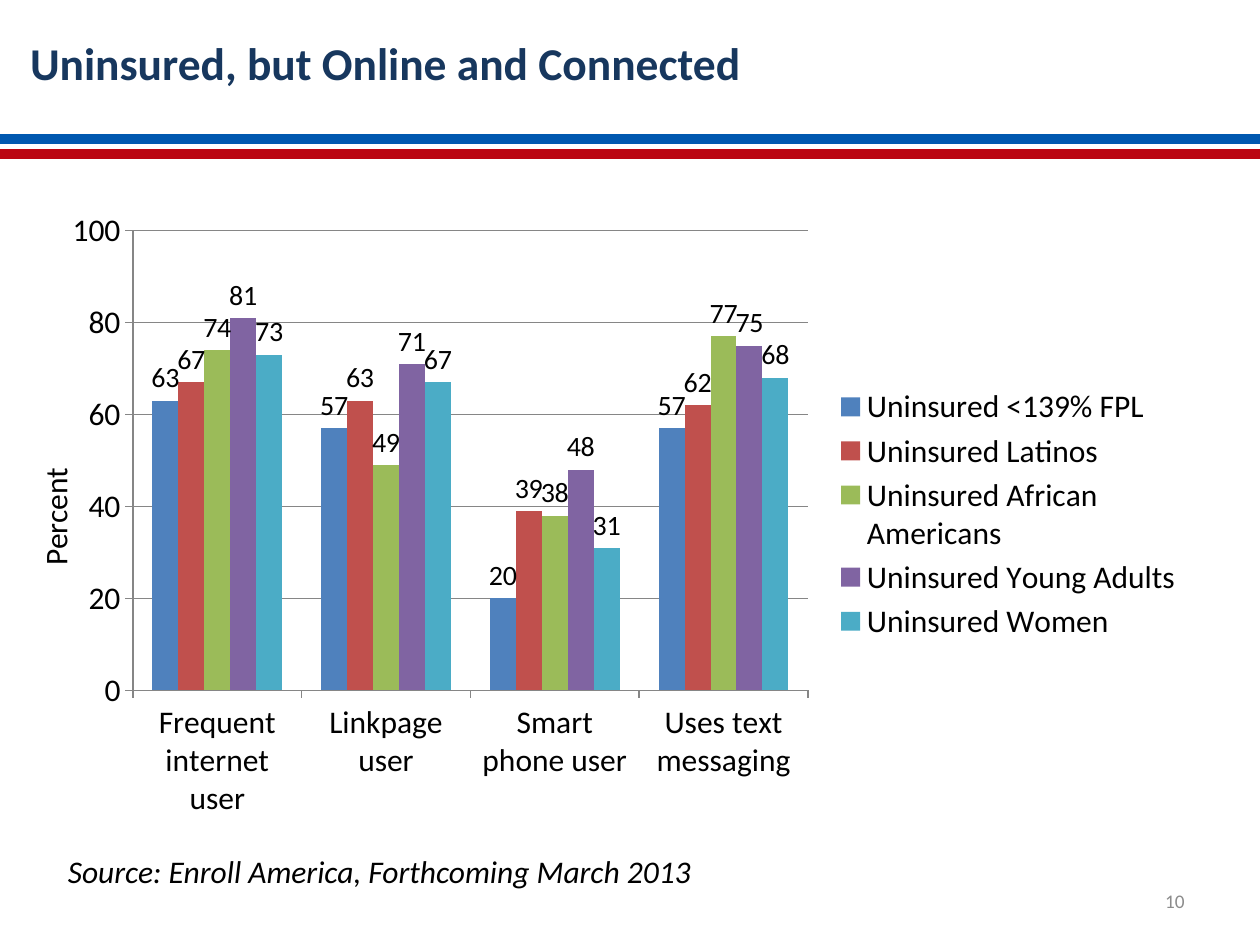
import pptx
import pptx.util
import pptx.dml.color
import pptx.chart.data
import pptx.enum.chart
import pptx.enum.shapes
import pptx.enum.text
from lxml import etree

Pt = pptx.util.Pt
Align = pptx.enum.text.PP_ALIGN
Anchor = pptx.enum.text.MSO_ANCHOR
Kind = pptx.enum.chart

# Content
TITLE = "Uninsured, but Online and Connected"
SOURCE = "Source: Enroll America, Forthcoming March 2013"
GROUPS = ["Frequent internet user", "Linkpage user",
          "Smart phone user", "Uses text messaging"]
SERIES = [
    ("Uninsured <139% FPL", (63, 57, 20, 57), "4F81BD"),
    ("Uninsured Latinos", (67, 63, 39, 62), "C0504D"),
    ("Uninsured African Americans", (74, 49, 38, 77), "9BBB59"),
    ("Uninsured Young Adults", (81, 71, 48, 75), "8064A2"),
    ("Uninsured Women", (73, 67, 31, 68), "4BACC6"),
]
STRIPES = [(77.8, "0058B0"), (84.2, "FFFFFF"), (86.4, "BB0512")]
FONT, GREY = "Calibri", "868686"


def color(code):
    return pptx.dml.color.RGBColor.from_string(code)


def style(font, size, code="000000", bold=False, italic=False):
    font.name, font.size = FONT, Pt(size)
    font.bold, font.italic = bold, italic
    font.color.rgb = color(code)


def write(text, box, size=18, align=Align.LEFT, anchor=Anchor.TOP,
          turn=0, **look):
    shape = slide.shapes.add_textbox(*map(Pt, box))
    shape.rotation = turn
    frame = shape.text_frame
    frame.word_wrap, frame.vertical_anchor = True, anchor
    para = frame.paragraphs[0]
    para.alignment = align
    run = para.add_run()
    run.text = text
    style(run.font, size, **look)


def place(part, x, y, w, h, inner=False):
    """Fix a chart part at fractions of the chart area."""
    for old in part.findall(C + "layout"):
        part.remove(old)
    layout = etree.Element(C + "layout")
    manual = etree.SubElement(layout, C + "manualLayout")
    items = [("layoutTarget", "inner")] if inner else []
    items += [("xMode", "edge"), ("yMode", "edge"),
              ("x", x), ("y", y), ("w", w), ("h", h)]
    for tag, val in items:
        etree.SubElement(manual, C + tag).set("val", str(val))
    part.insert(0 if inner else 1, layout)


C = "{http://schemas.openxmlformats.org/drawingml/2006/chart}"
deck = pptx.Presentation()
deck.slide_width, deck.slide_height = Pt(720), Pt(540)
slide = deck.slides.add_slide(deck.slide_layouts[6])

# Header stripes
for top, code in STRIPES:
    bar = slide.shapes.add_shape(pptx.enum.shapes.MSO_SHAPE.RECTANGLE,
                                 0, Pt(top), Pt(720), Pt(3.6))
    bar.shadow.inherit = False
    bar.fill.solid()
    bar.fill.fore_color.rgb = bar.line.color.rgb = color(code)
    bar.line.width = Pt(2)

write(TITLE, (10.1, 16.6, 648, 90), size=26, code="17375E", bold=True)

# Chart
data = pptx.chart.data.CategoryChartData(number_format="General")
data.categories = GROUPS
for name, vals, code in SERIES:
    data.add_series(name, vals)
chart = slide.shapes.add_chart(
    Kind.XL_CHART_TYPE.COLUMN_CLUSTERED,
    Pt(30.2), Pt(113.8), Pt(653.8), Pt(360), data).chart
chart.has_title = False
style(chart.font, 18)

plot = chart.plots[0]
plot.gap_width, plot.overlap, plot.vary_by_categories = 150, 0, False
for series, (name, vals, code) in zip(plot.series, SERIES):
    series.format.fill.solid()
    series.format.fill.fore_color.rgb = color(code)
    series.invert_if_negative = False
    labels = series.data_labels
    labels.show_value = True
    labels.position = Kind.XL_LABEL_POSITION.OUTSIDE_END
    style(labels.font, 16)

# Axes
scale = chart.value_axis
scale.minimum_scale, scale.maximum_scale, scale.major_unit = 0, 100, 20
scale.has_major_gridlines = True
for axis in (scale, chart.category_axis):
    axis.major_tick_mark = Kind.XL_TICK_MARK.OUTSIDE
    axis.minor_tick_mark = Kind.XL_TICK_MARK.NONE
    style(axis.tick_labels.font, 18)
for part in (scale, chart.category_axis, scale.major_gridlines):
    part.format.line.color.rgb = color(GREY)
    part.format.line.width = Pt(0.75)

# Legend and plot area
chart.has_legend = True
legend = chart.legend
legend.position = Kind.XL_LEGEND_POSITION.RIGHT
legend.include_in_layout = False
style(legend.font, 18)
place(legend._element, 0.68, 0.29, 0.31, 0.42)
place(chart._chartSpace.find(f".//{C}plotArea"),
      0.07, 0.05, 0.59, 0.73, inner=True)

# Captions
write("10", (516, 500.4, 168, 28.8), size=11, code="8C8C8C",
      align=Align.RIGHT, anchor=Anchor.MIDDLE)
write("Percent", (-52.6, 280.8, 168, 28.8), align=Align.CENTER, turn=270)
write(SOURCE, (31.7, 483.1, 606, 28.8), italic=True)

deck.save("out.pptx")
